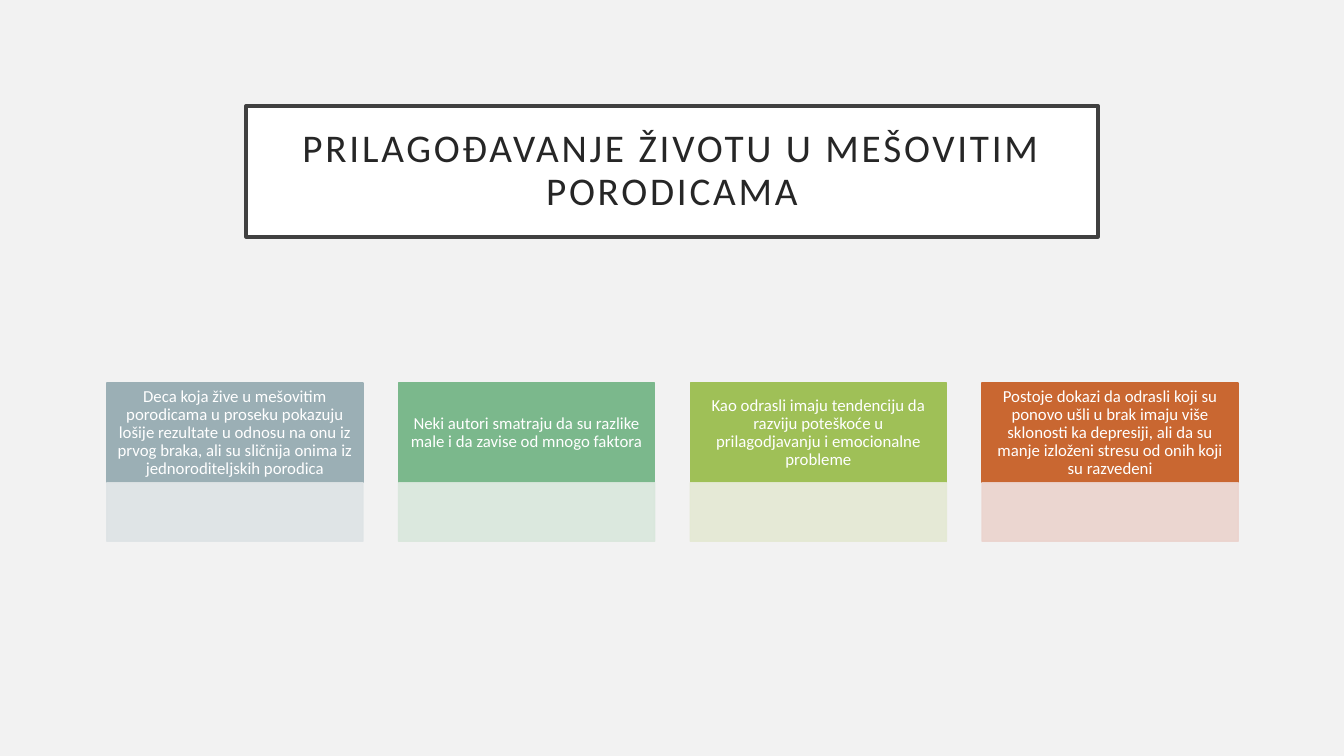
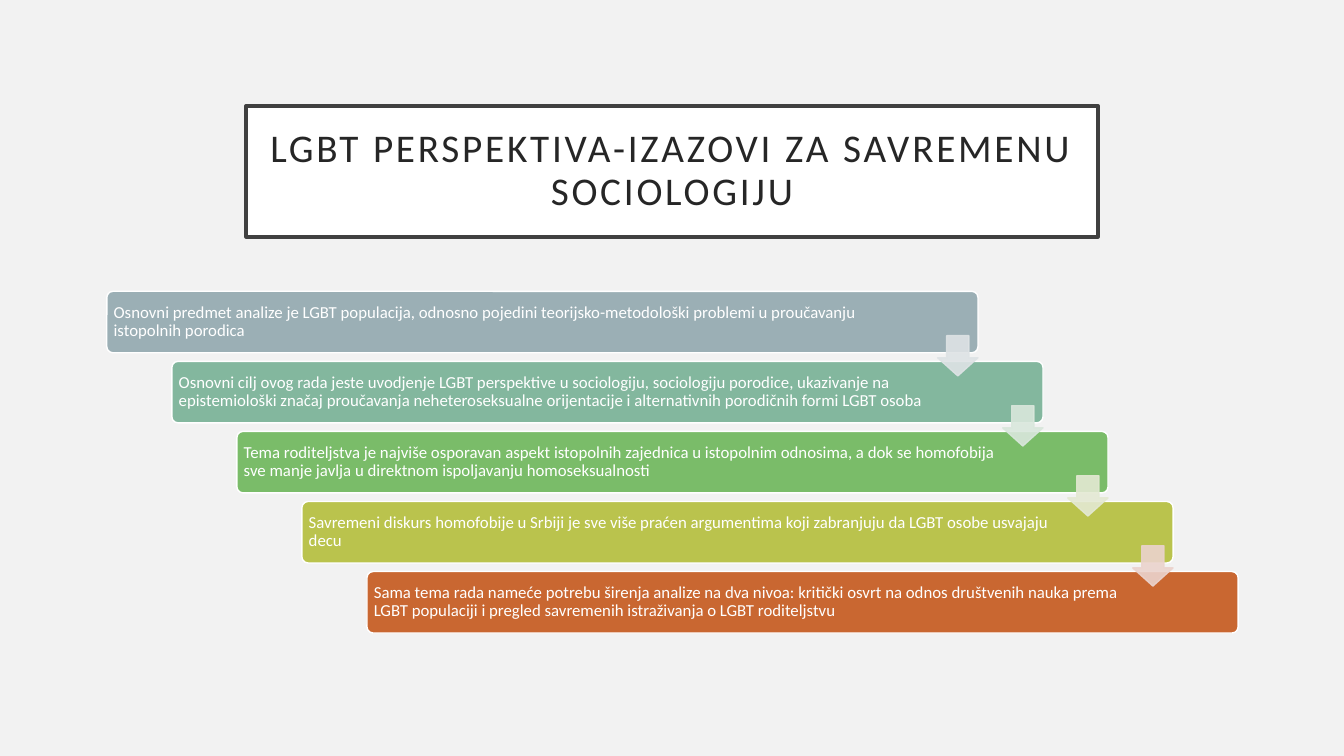
from lxml import etree
from pptx import Presentation
from pptx import util as u
from pptx.dml.color import RGBColor
from pptx.enum import shapes, text
from pptx.oxml.ns import qn

FONT = "Calibri"
PAPER = RGBColor(0xF2, 0xF2, 0xF2)
WHITE = RGBColor(0xFF, 0xFF, 0xFF)
FRAME = RGBColor(0x40, 0x40, 0x40)
INK = RGBColor(0x26, 0x26, 0x26)
SLATE = RGBColor(0x9B, 0xAF, 0xB5)
SAGE = RGBColor(0x83, 0xB7, 0x9E)
MINT = RGBColor(0x7B, 0xB8, 0x8C)
GREEN = RGBColor(0x7A, 0xBC, 0x69)
LIME = RGBColor(0x9F, 0xC0, 0x57)
OLIVE = RGBColor(0xBA, 0xC3, 0x4D)
RUST = RGBColor(0xC9, 0x67, 0x31)
TINTS = [RGBColor(0xDE, 0xE3, 0xE5), RGBColor(0xD9, 0xE7, 0xDC),
         RGBColor(0xE4, 0xE9, 0xD3), RGBColor(0xEB, 0xD3, 0xCD)]

# Boxes are left, top, width, height in inches
TITLE_BOX = (2.44, 1.05, 8.45, 1.3)
CARDS_BOX = (1.06, 3.8, 11.22, 1.57)
CASCADE_BOX = (1.06, 2.89, 11.22, 3.39)

FINDINGS = [
    ("Deca koja žive u mešovitim porodicama u proseku pokazuju lošije rezultate "
     "u odnosu na onu iz prvog braka, ali su sličnija onima iz jednoroditeljskih "
     "porodica", SLATE),
    ("Neki autori smatraju da su razlike male i da zavise od mnogo faktora", MINT),
    ("Kao odrasli imaju tendenciju da razviju poteškoće u prilagodjavanju i "
     "emocionalne probleme", LIME),
    ("Postoje dokazi da odrasli koji su ponovo ušli u brak imaju više sklonosti "
     "ka depresiji, ali da su manje izloženi stresu od onih koji su razvedeni", RUST),
]
CHALLENGES = [
    ("Osnovni predmet analize je LGBT populacija, odnosno pojedini "
     "teorijsko-metodološki problemi u proučavanju istopolnih porodica", SLATE),
    ("Osnovni cilj ovog rada jeste uvodjenje LGBT perspektive u sociologiju, "
     "sociologiju porodice, ukazivanje na epistemiološki značaj proučavanja "
     "neheteroseksualne orijentacije i alternativnih porodičnih formi LGBT osoba", SAGE),
    ("Tema roditeljstva je najviše osporavan aspekt istopolnih zajednica u "
     "istopolnim odnosima, a dok se homofobija sve manje javlja u direktnom "
     "ispoljavanju homoseksualnosti", GREEN),
    ("Savremeni diskurs homofobije u Srbiji je sve više praćen argumentima koji "
     "zabranjuju da LGBT osobe usvajaju decu", OLIVE),
    ("Sama tema rada nameće potrebu širenja analize na dva nivoa: kritički osvrt "
     "na odnos društvenih nauka prema LGBT populaciji i pregled savremenih "
     "istraživanja o LGBT roditeljstvu", RUST),
]


def paint(shape, fill, line, width=1):
    shape.fill.solid()
    shape.fill.fore_color.rgb = fill
    shape.line.color.rgb = line
    shape.line.width = u.Pt(width)


def write(shape, words, size, color, align, margins):
    """Set one paragraph; margins are left, top, right, bottom in inches."""
    frame = shape.text_frame
    frame.word_wrap = True
    frame.auto_size = text.MSO_AUTO_SIZE.NONE
    frame.vertical_anchor = text.MSO_ANCHOR.MIDDLE
    (frame.margin_left, frame.margin_top,
     frame.margin_right, frame.margin_bottom) = map(u.Inches, margins)
    frame.text = words
    paragraph = frame.paragraphs[0]
    paragraph.alignment = align
    paragraph.line_spacing = 0.9
    paragraph.font.name = FONT
    paragraph.font.size = u.Pt(size)
    paragraph.font.color.rgb = color
    return paragraph


def add_block(slide, kind, box, fill, line, adjustments=()):
    block = slide.shapes.add_shape(kind, *map(u.Inches, box))
    block.shadow.inherit = False
    paint(block, fill, line)
    for index, value in enumerate(adjustments):
        block.adjustments[index] = value
    return block


def add_tint(slide, kind, box, tint, adjustments=()):
    """Add a pale block whose fill and line are 90 % opaque."""
    block = add_block(slide, kind, box, tint, tint, adjustments)
    for color in block._element.spPr.iter(qn("a:srgbClr")):
        etree.SubElement(color, qn("a:alpha"), val="90000")


def add_titled_slide(prs, words):
    slide = prs.slides.add_slide(prs.slide_layouts.get_by_name("Title Only"))
    title = slide.shapes.title
    title.left, title.top, title.width, title.height = map(u.Inches, TITLE_BOX)
    paint(title, WHITE, FRAME, 2.5)
    heading = write(title, words, 28, INK, text.PP_ALIGN.CENTER, [0.2] * 4)
    heading.runs[0]._r.get_or_add_rPr().set("spc", "200")
    return slide


def add_cards(slide, box, findings):
    left, top, width, height = box
    card_width = 2.54
    step = (width - card_width) / (len(findings) - 1)
    head = height * 0.63
    rectangle = shapes.MSO_SHAPE.RECTANGLE
    for index, ((words, color), tint) in enumerate(zip(findings, TINTS)):
        x = left + index * step
        card = add_block(slide, rectangle, (x, top, card_width, head), color, color)
        write(card, words, 12, WHITE, text.PP_ALIGN.CENTER, (0.09, 0.05, 0.09, 0.05))
        add_tint(slide, rectangle, (x, top + head, card_width, height - head), tint)


def add_cascade(slide, box, challenges):
    """Add bars stepping down to the right, with an arrow over each gap."""
    left, top, width, height = box
    bar_width, bar_height, arrow = 8.64, 0.61, 0.4
    gaps = len(challenges) - 1
    step_x, step_y = (width - bar_width) / gaps, (height - bar_height) / gaps
    corners = [(left + i * step_x, top + i * step_y) for i in range(len(challenges))]
    for (x, y), (words, color) in zip(corners, challenges):
        bar = add_block(slide, shapes.MSO_SHAPE.ROUNDED_RECTANGLE,
                        (x, y, bar_width, bar_height), color, WHITE, [0.1])
        write(bar, words, 12, WHITE, text.PP_ALIGN.LEFT, (0.05, 0.05, 1.1, 0.05))
    for (x, y), tint in zip(corners, TINTS):
        add_tint(slide, shapes.MSO_SHAPE.DOWN_ARROW,
                 (x + bar_width - arrow, y + 0.44, arrow, arrow), tint, [0.55, 0.45])


def main():
    prs = Presentation()
    prs.slide_width, prs.slide_height = u.Inches(13.33), u.Inches(7.5)
    background = prs.slide_master.background.fill
    background.solid()
    background.fore_color.rgb = PAPER

    adjusting = add_titled_slide(prs, "PRILAGOĐAVANJE ŽIVOTU U MEŠOVITIM PORODICAMA")
    add_cards(adjusting, CARDS_BOX, FINDINGS)
    perspective = add_titled_slide(
        prs, "LGBT PERSPEKTIVA-IZAZOVI ZA SAVREMENU SOCIOLOGIJU")
    add_cascade(perspective, CASCADE_BOX, CHALLENGES)
    prs.save("out.pptx")


if __name__ == "__main__":
    main()
